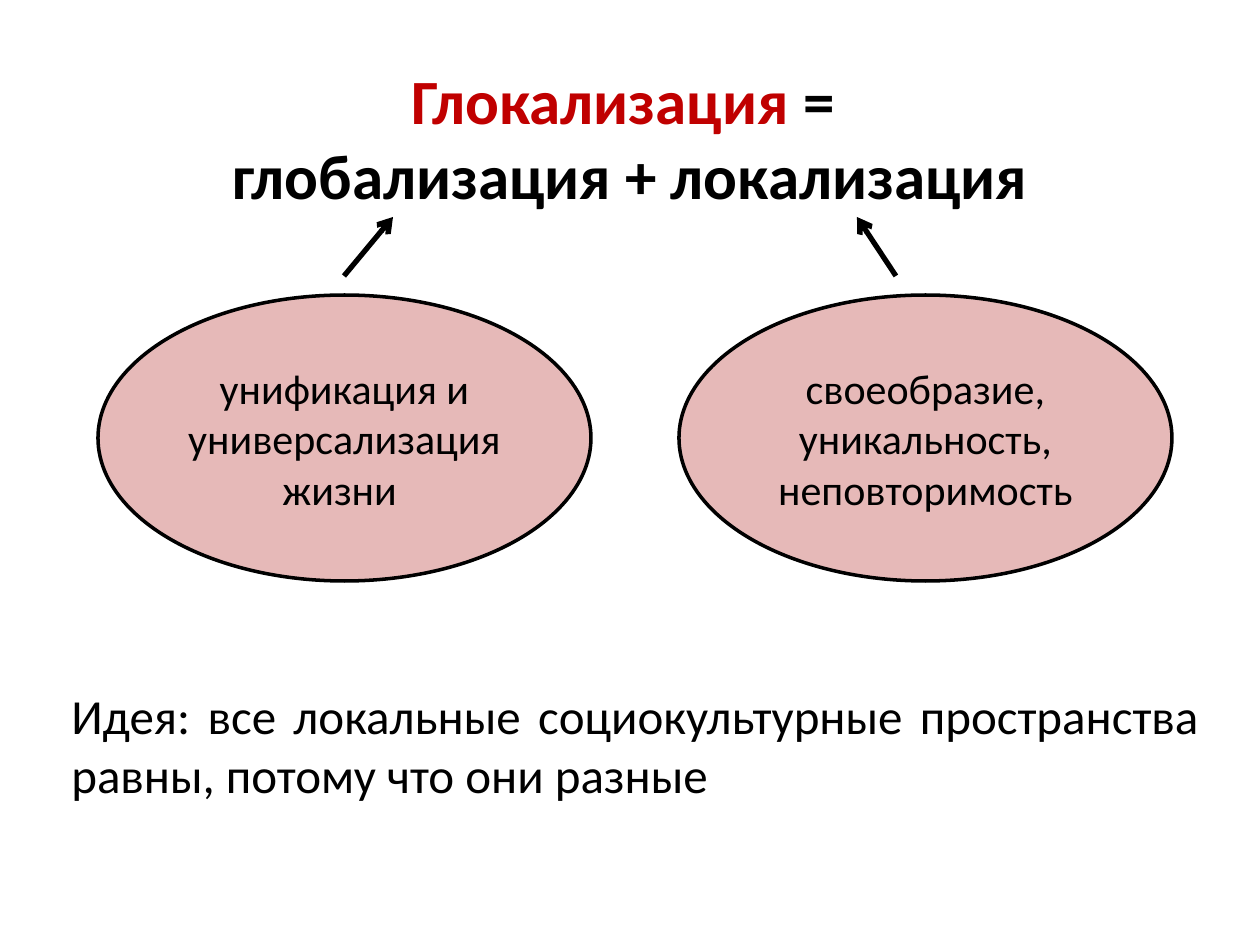
from copy import deepcopy

from lxml import etree
from pptx import Presentation
from pptx.dml.color import RGBColor
from pptx.enum.shapes import MSO_CONNECTOR, MSO_SHAPE
from pptx.enum.text import MSO_ANCHOR, MSO_AUTO_SIZE, PP_ALIGN
from pptx.oxml.ns import qn
from pptx.util import Emu, Pt

LINE = MSO_CONNECTOR.STRAIGHT
OVAL = MSO_SHAPE.OVAL
MIDDLE = MSO_ANCHOR.MIDDLE
FIXED = MSO_AUTO_SIZE.NONE
CENTER, JUSTIFY = PP_ALIGN.CENTER, PP_ALIGN.JUSTIFY
SCALE = 914400 // 126
BLACK, RED, PINK = "000000", "C00000", "E6B9B8"


def px(*sizes):
    return [Emu(size * SCALE) for size in sizes]


def paint(color, code):
    color.rgb = RGBColor.from_string(code)


def style(run, size, code=BLACK, bold=False):
    run.font.name = "Calibri"
    run.font.size = Pt(size)
    run.font.bold = bold
    paint(run.font.color, code)


def write(frame, text, size, align):
    frame.word_wrap = True
    frame.text = text
    para = frame.paragraphs[0]
    para.alignment = align
    for run in para.runs:
        style(run, size)
    return para


def add_title(slide, term, rest):
    title = slide.shapes.title
    title.left, title.top, title.width, title.height = px(63, 38, 1134, 198)
    frame = title.text_frame
    frame.auto_size = FIXED
    frame.vertical_anchor = MIDDLE
    para = write(frame, term, 36, CENTER)
    style(para.runs[0], 36, RED, True)
    for index, text in enumerate(rest):
        if index:
            para.add_line_break()
        run = para.add_run()
        run.text = text
        style(run, 36, BLACK, True)
    props = para.runs[-1].font._element
    for gap in para._p.findall(qn("a:br")):
        gap.append(deepcopy(props))


def add_note(slide, text):
    box = slide.shapes.add_textbox(*px(59, 679, 1152, 170))
    write(box.text_frame, text, 28, JUSTIFY)


def add_oval(slide, left, text):
    oval = slide.shapes.add_shape(OVAL, *px(left, 295, 493, 286))
    oval.shadow.inherit = False
    oval.fill.solid()
    paint(oval.fill.fore_color, PINK)
    paint(oval.line.color, BLACK)
    oval.line.width = Pt(2)
    oval.text_frame.vertical_anchor = MIDDLE
    write(oval.text_frame, text, 24, CENTER)


def add_arrow(slide, start, end):
    arrow = slide.shapes.add_connector(LINE, *px(start, 276, end, 217))
    paint(arrow.line.color, BLACK)
    arrow.line.width = Pt(3)
    line = arrow.line._get_or_add_ln()
    etree.SubElement(line, qn("a:tailEnd"), type="arrow")
    etree.SubElement(line.getparent(), qn("a:effectLst"))


def main():
    deck = Presentation()
    deck.slide_width, deck.slide_height = px(1260, 945)
    slide = deck.slides.add_slide(deck.slide_layouts[5])
    add_title(slide, "Глокализация", [" = ", "глобализация + локализация"])
    add_note(
        slide,
        "Идея: все локальные социокультурные пространства равны, "
        "потому что они разные",
    )
    add_oval(slide, 98, "унификация и универсализация жизни ")
    add_oval(slide, 679, "своеобразие, уникальность, неповторимость")
    add_arrow(slide, 344, 393)
    add_arrow(slide, 896, 857)
    deck.save("out.pptx")


if __name__ == "__main__":
    main()
